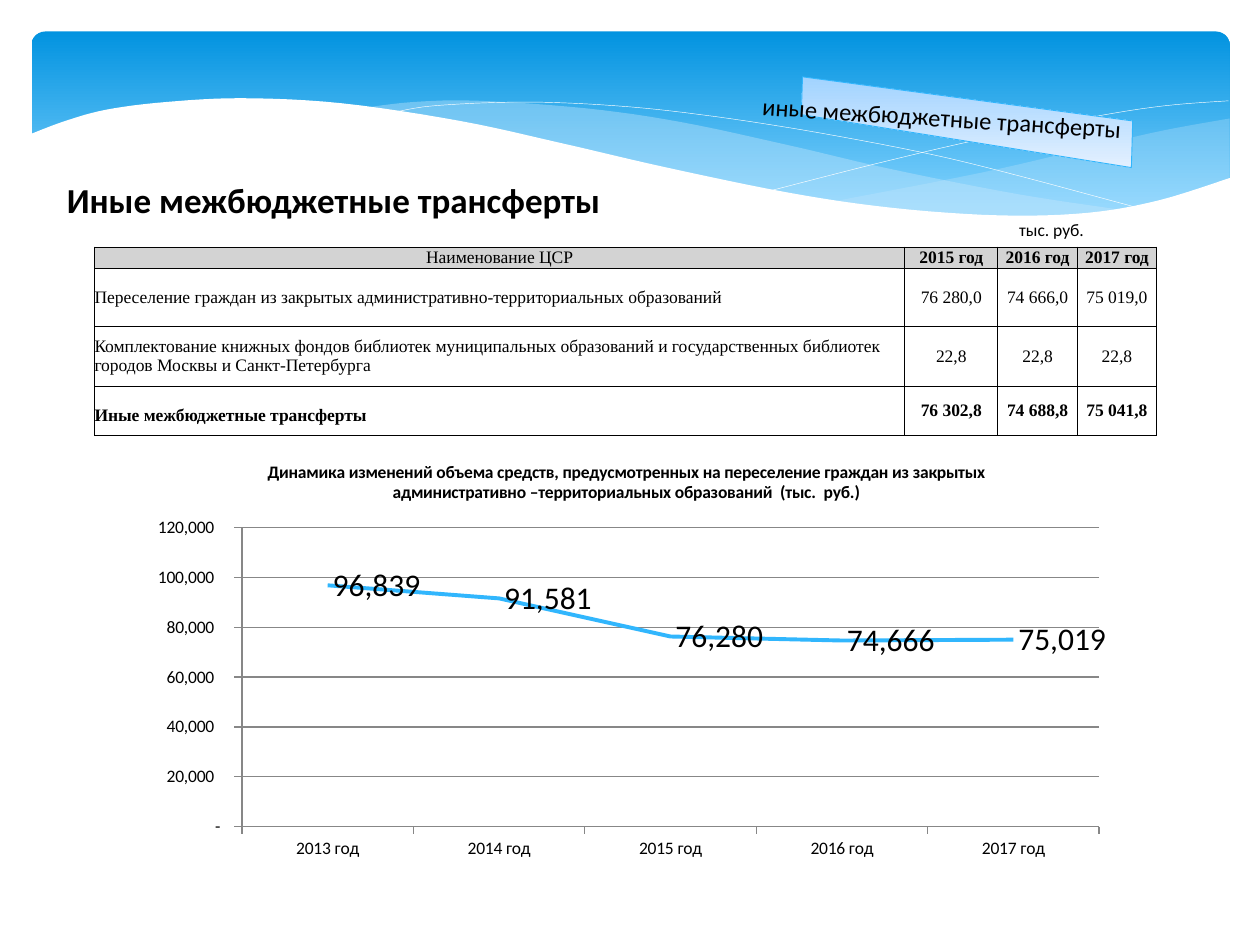
import dataclasses
import typing

import lxml.etree
import pptx
import pptx.chart.data
import pptx.dml.color
import pptx.enum.chart
import pptx.enum.shapes
import pptx.enum.text
import pptx.oxml
import pptx.oxml.ns
import pptx.util

COLUMNS = 100
CELL = pptx.util.Inches(10) // COLUMNS
Curve = tuple[tuple[float, float], ...]
ALIGN = pptx.enum.text.PP_ALIGN
ANCHOR = pptx.enum.text.MSO_ANCHOR
SERIF, SANS = "Times New Roman", "Calibri"
BLACK, WHITE, GRID_GRAY = "000000", "FFFFFF", "878787"


@dataclasses.dataclass(frozen=True)
class Box:
    left: float
    top: float
    width: float
    height: float

    def emu(self) -> list[int]:
        return [cells(v) for v in dataclasses.astuple(self)]


@dataclasses.dataclass(frozen=True)
class Wave:
    edges: tuple[Curve, ...]
    fill: str = ""
    opacity: int = 100


@dataclasses.dataclass(frozen=True)
class Label:
    text: str
    box: Box
    size: int
    bold: bool = False
    wrap: bool = False
    rotation: float = 0
    align: typing.Any = ALIGN.LEFT


WAVES = (
    Wave((((97.6, 9.4), (92.1, 10.4), (86.1, 11.8), (77.9, 13.7), (66.1, 16)),
          ((66.1, 16), (73.2, 16.8), (79.2, 17.2), (85.4, 17.1), (90.5, 16.3), (94.9, 15.2), (97.6, 14.1))),
         "C6E7FC", 29),
    Wave((((89.3, 16.7), (80.7, 15.4), (70.6, 13.4), (62.9, 11.6), (54.1, 9.7), (46.5, 8.6),
           (38, 8), (32.8, 8.1), (28.6, 8.6)),
          ((28.6, 8.6), (36.2, 9.7), (44.9, 11.6), (56.6, 14.3), (66.5, 16.1), (76.1, 17.1),
           (82.8, 17.3), (89.3, 16.7))),
         "C6E7FC", 40),
    Wave((((30.9, 9), (34.4, 8.4), (41.6, 8.1), (48.9, 8.4), (55.6, 9.1), (63.6, 10.3),
           (72.7, 12), (79.5, 13.6), (90.7, 16.6)),)),
    Wave((((61.3, 15.1), (69.5, 13), (77.6, 11.1), (86.6, 9.3), (92.4, 8.4), (97.5, 8)),)),
    Wave((((97.7, 14.1), (92, 15.9), (86.3, 16.9), (79.3, 17.1), (70.8, 16.5), (62.6, 15.3),
           (52.9, 13.3), (44.7, 11.4), (36.5, 9.6), (27.1, 8.2), (19.3, 7.8), (13.2, 8.1),
           (8.5, 8.7), (5.2, 9.6), (2.3, 10.7)),
          ((2.3, 22.4), (97.7, 22.4))), WHITE),
)
BANNER_EDGES = (((63.7, 6.1), (89.9, 9.6)), ((89.8, 13.3), (63.6, 9.1)))
BANNER_LABEL = Label("иные межбюджетные трансферты", Box(59, 7.6, 31.5, 3.4), 14,
                     rotation=3.7, align=ALIGN.CENTER)
UNIT_LABEL = Label("тыс. руб.", Box(79.9, 16.9, 10.2, 2.7), 10, wrap=True)
HEADING = Label("Иные межбюджетные трансферты", Box(4.3, 13.6, 45.2, 4.4), 20, bold=True)

TRANSFERS = (
    ("Наименование ЦСР", "2015 год", "2016 год", "2017 год"),
    ("Переселение граждан из закрытых административно-территориальных образований",
     "76 280,0", "74 666,0", "75 019,0"),
    ("Комплектование книжных фондов библиотек муниципальных образований и государственных "
     "библиотек городов Москвы и Санкт-Петербурга", "22,8", "22,8", "22,8"),
    ("Иные межбюджетные трансферты", "76 302,8", "74 688,8", "75 041,8"),
)
TABLE_BOX = Box(7.5, 19.6, 84.3, 15)
TABLE_COLUMNS = (6.43 * 10, 7.4, 6.3, 6.3)
TABLE_ROWS = (1.7, 4.6, 4.75, 3.9)

SPENDING = {"2013 год": 96839, "2014 год": 91581, "2015 год": 76280,
            "2016 год": 74666, "2017 год": 75019}
CHART_BOX = Box(10.6, 35.1, 78.2, 33.9)
CHART_TITLE = ("Динамика изменений объема средств, предусмотренных на переселение граждан "
               "из закрытых административно –территориальных образований  (тыс.  руб.)")
PLOT_SHARES = {"x": 0.11, "y": 0.2, "w": 0.87, "h": 0.7}


def cells(count: float) -> int:
    return round(count * CELL)


def color(value: str) -> pptx.dml.color.RGBColor:
    return pptx.dml.color.RGBColor.from_string(value)


def apply(target: typing.Any, **values: typing.Any) -> None:
    for name, value in values.items():
        setattr(target, name, value)


def style_font(font: typing.Any, size: float, bold: bool = False, face: str = SANS) -> None:
    apply(font, size=pptx.util.Pt(size), bold=bold, name=face)
    font.color.rgb = color(BLACK)


def style_line(line: typing.Any, value: str, width: float) -> None:
    line.color.rgb = color(value)
    line.width = pptx.util.Pt(width)


def fill_gradient(shape: typing.Any, stops: tuple[tuple[float, str], ...]) -> None:
    shape.fill.gradient()
    shape.fill.gradient_angle = 270
    for stop, (position, value) in zip(shape.fill.gradient_stops, stops):
        stop.position = position
        stop.color.rgb = color(value)


def smooth(knots: Curve, steps: int = 6) -> list[tuple[float, float]]:
    padded = (knots[0], *knots, knots[-1])
    points = [knots[0]]
    for a, b, c, d in zip(padded, padded[1:], padded[2:], padded[3:]):
        for t in (step / steps for step in range(1, steps + 1)):
            points.append(tuple(
                q + t / 2 * (r - p + t * (2 * p - 5 * q + 4 * r - s + t * (3 * q - p - 3 * r + s)))
                for p, q, r, s in zip(a, b, c, d)))
    return points


def draw_outline(slide: typing.Any, edges: tuple[Curve, ...], closed: bool) -> typing.Any:
    points = [(cells(x), cells(y)) for edge in edges
              for x, y in (smooth(edge) if len(edge) > 2 else edge)]
    builder = slide.shapes.build_freeform(*points[0])
    builder.add_line_segments(points[1:], close=closed)
    outline = builder.convert_to_shape()
    outline.shadow.inherit = False
    return outline


def draw_wave(slide: typing.Any, wave: Wave) -> None:
    shape = draw_outline(slide, wave.edges, bool(wave.fill))
    if not wave.fill:
        shape.fill.background()
        style_line(shape.line, WHITE, 0.25)
        return
    shape.fill.solid()
    shape.fill.fore_color.rgb = color(wave.fill)
    shape.line.fill.background()
    if wave.opacity < 100:
        tint = shape.fill._xPr.find(".//" + pptx.oxml.ns.qn("a:srgbClr"))
        lxml.etree.SubElement(tint, pptx.oxml.ns.qn("a:alpha"), val=str(wave.opacity * 1000))


def write_label(shape: typing.Any, label: Label) -> None:
    left, top, width, height = label.box.emu()
    apply(shape, left=left, top=top, width=width, height=height, rotation=label.rotation)
    apply(shape.text_frame, text=label.text, word_wrap=label.wrap, vertical_anchor=ANCHOR.MIDDLE)
    paragraph = shape.text_frame.paragraphs[0]
    paragraph.alignment = label.align
    style_font(paragraph.runs[0].font, label.size, label.bold)


def draw_header(slide: typing.Any) -> None:
    sky = slide.shapes.add_shape(pptx.enum.shapes.MSO_SHAPE.ROUNDED_RECTANGLE,
                                 *Box(2.5, 2.5, 95.1, 15.6).emu())
    sky.adjustments[0] = 0.07
    sky.shadow.inherit = False
    sky.line.fill.background()
    fill_gradient(sky, ((0, "0293E0"), (0.9, "83D3FE")))
    for wave in WAVES:
        draw_wave(slide, wave)


def draw_banner(slide: typing.Any) -> None:
    banner = draw_outline(slide, BANNER_EDGES, True)
    fill_gradient(banner, ((0, "A1D3FF"), (1, "E3F0FF")))
    style_line(banner.line, "31B6FD", 0.5)
    for label in (BANNER_LABEL, UNIT_LABEL):
        write_label(slide.shapes.add_textbox(*label.box.emu()), label)


def add_borders(cell: typing.Any) -> None:
    for side in ("lnL", "lnR", "lnT", "lnB"):
        cell._tc.get_or_add_tcPr().append(pptx.oxml.parse_xml(
            f'<a:{side} {pptx.oxml.ns.nsdecls("a")} w="6350"><a:solidFill>'
            f'<a:srgbClr val="{BLACK}"/></a:solidFill></a:{side}>'))


def draw_table(slide: typing.Any) -> None:
    table = slide.shapes.add_table(len(TABLE_ROWS), len(TABLE_COLUMNS), *TABLE_BOX.emu()).table
    apply(table, first_row=False, horz_banding=False)
    for column, width in zip(table.columns, TABLE_COLUMNS):
        column.width = cells(width)
    last = len(TABLE_ROWS) - 1
    for r, (row, height) in enumerate(zip(table.rows, TABLE_ROWS)):
        row.height = cells(height)
        for c, cell in enumerate(row.cells):
            low = r == last and c == 0
            apply(cell, text=TRANSFERS[r][c], margin_left=0, margin_right=0, margin_bottom=0,
                  margin_top=cells(0.8) if low else 0, vertical_anchor=ANCHOR.MIDDLE)
            paragraph = cell.text_frame.paragraphs[0]
            paragraph.alignment = ALIGN.CENTER if r == 0 or c else ALIGN.LEFT
            style_font(paragraph.runs[0].font, 10, r == last or (r == 0 and c > 0), SERIF)
            add_borders(cell)
            if r:
                cell.fill.background()
            else:
                cell.fill.solid()
                cell.fill.fore_color.rgb = color("D3D3D3")


def place_plot(chart: typing.Any) -> None:
    plot_area = chart._chartSpace.chart.plotArea
    for layout in plot_area.findall(pptx.oxml.ns.qn("c:layout")):
        plot_area.remove(layout)
    shares = "".join(f'<c:{key} val="{share}"/>' for key, share in PLOT_SHARES.items())
    plot_area.insert(0, pptx.oxml.parse_xml(
        f'<c:layout {pptx.oxml.ns.nsdecls("c")}><c:manualLayout><c:layoutTarget val="inner"/>'
        f'<c:xMode val="edge"/><c:yMode val="edge"/>{shares}</c:manualLayout></c:layout>'))


def draw_chart(slide: typing.Any) -> None:
    data = pptx.chart.data.CategoryChartData()
    data.categories = list(SPENDING)
    data.add_series("Series 1", list(SPENDING.values()))
    kinds = pptx.enum.chart
    chart = slide.shapes.add_chart(kinds.XL_CHART_TYPE.LINE, *CHART_BOX.emu(), data).chart
    chart.has_legend = False
    style_font(chart.font, 18)
    chart.chart_title.text_frame.text = CHART_TITLE
    style_font(chart.chart_title.text_frame.paragraphs[0].runs[0].font, 10, True)
    for axis in (chart.category_axis, chart.value_axis):
        axis.major_tick_mark = kinds.XL_TICK_MARK.OUTSIDE
        style_font(axis.tick_labels.font, 10)
        style_line(axis.format.line, GRID_GRAY, 0.75)
    apply(chart.value_axis, minimum_scale=0, maximum_scale=120000, major_unit=20000)
    style_line(chart.value_axis.major_gridlines.format.line, GRID_GRAY, 0.75)
    apply(chart.value_axis.tick_labels, number_format_is_linked=False,
          number_format='_-* #,##0_р_._-;\\-* #,##0_р_._-;_-* "-"?')
    plot = chart.plots[0]
    apply(plot, vary_by_categories=False, has_data_labels=True)
    apply(plot.data_labels, show_value=True, number_format="#,##0",
          number_format_is_linked=False, position=kinds.XL_LABEL_POSITION.RIGHT)
    style_font(plot.data_labels.font, 18)
    spending = plot.series[0]
    spending.smooth = False
    spending.marker.style = kinds.XL_MARKER_STYLE.NONE
    style_line(spending.format.line, "31B6FD", 2.25)
    place_plot(chart)


def main() -> None:
    deck = pptx.Presentation()
    apply(deck, slide_width=CELL * COLUMNS, slide_height=CELL * 75)
    slide = deck.slides.add_slide(deck.slide_layouts[5])
    draw_header(slide)
    heading = slide.shapes.title
    write_label(heading, HEADING)
    slide.shapes._spTree.append(heading._element)
    draw_table(slide)
    draw_chart(slide)
    draw_banner(slide)
    deck.save("out.pptx")


if __name__ == "__main__":
    main()
